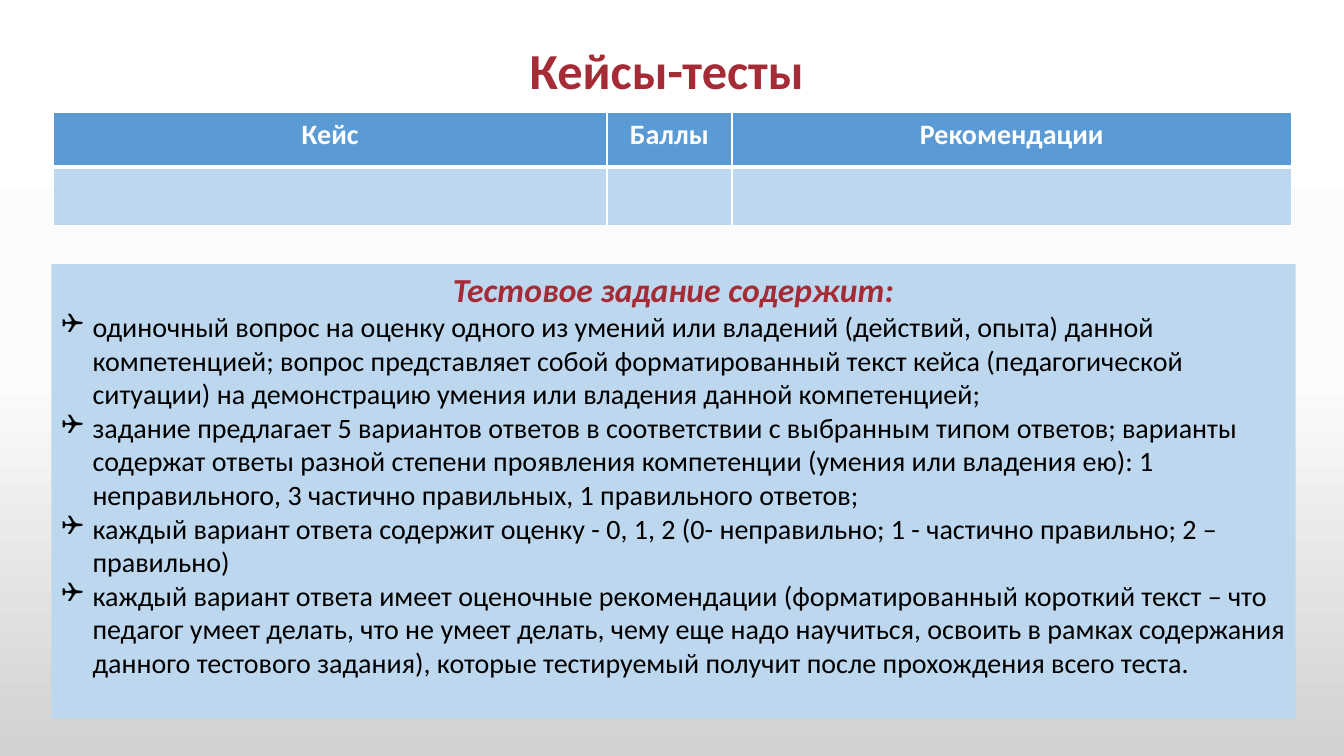
import copy
import dataclasses

import lxml.etree
import pptx
import pptx.dml.color
import pptx.enum.shapes
import pptx.enum.text
import pptx.oxml
import pptx.oxml.ns
import pptx.util

Inches = pptx.util.Inches
Pt = pptx.util.Pt
qn = pptx.oxml.ns.qn
CENTER = pptx.enum.text.PP_ALIGN.CENTER
MIDDLE = pptx.enum.text.MSO_ANCHOR.MIDDLE

FONT = "Calibri"
RED = "A52C36"
WHITE = "FFFFFF"
BLACK = "000000"
BLUE = "5B9BD5"
PALE_BLUE = "BDD7EE"


@dataclasses.dataclass(frozen=True)
class TextStyle:
    size: float
    color: str
    bold: bool = False
    italic: bool = False


@dataclasses.dataclass(frozen=True)
class Column:
    heading: str
    width: float


TITLE_STYLE = TextStyle(36, RED, bold=True)
HEADING_STYLE = TextStyle(20, WHITE, bold=True)
SUBTITLE_STYLE = TextStyle(24, RED, bold=True, italic=True)
BODY_STYLE = TextStyle(20, BLACK)

BACKGROUND_STOPS = [(0, "FFFFFF"), (0.5, "FBFBFB"), (1, "D1D1D1")]
COLUMNS = [Column("Кейс", 5.49), Column("Баллы", 1.24), Column("Рекомендации", 5.55)]
ROW_HEIGHTS = [0.54, 0.58]
REQUIREMENTS = [
    "одиночный вопрос на оценку одного из умений или владений (действий, опыта) данной "
    "компетенцией; вопрос представляет собой форматированный текст кейса (педагогической "
    "ситуации) на демонстрацию умения или владения данной компетенцией;",
    "задание предлагает 5 вариантов ответов в соответствии с выбранным типом ответов; варианты "
    "содержат ответы разной степени проявления компетенции (умения или владения ею): 1 "
    "неправильного, 3 частично правильных, 1 правильного ответов;",
    "каждый вариант ответа содержит оценку - 0, 1, 2 (0- неправильно; 1 - частично правильно; 2 – "
    "правильно)",
    "каждый вариант ответа имеет оценочные рекомендации (форматированный короткий текст – что "
    "педагог умеет делать, что не умеет делать, чему еще надо научиться, освоить в рамках "
    "содержания данного тестового задания), которые тестируемый получит после прохождения всего "
    "теста.",
]


def rgb(value: str) -> pptx.dml.color.RGBColor:
    return pptx.dml.color.RGBColor.from_string(value)


def add_run(paragraph, text: str, style: TextStyle) -> None:
    run = paragraph.add_run()
    run.text = text
    run.font.name = FONT
    run.font.size = Pt(style.size)
    run.font.bold = style.bold
    run.font.italic = style.italic
    run.font.color.rgb = rgb(style.color)


def fill_background(slide) -> None:
    fill = slide.background.fill
    fill.gradient()
    fill.gradient_angle = 270
    stop_list = slide.element.find(".//" + qn("a:gsLst"))
    stop_list.insert(1, copy.deepcopy(stop_list[0]))
    for stop, (position, color) in zip(fill.gradient_stops, BACKGROUND_STOPS):
        stop.position = position
        stop.color.rgb = rgb(color)


def add_title(slide) -> None:
    box = slide.shapes.add_textbox(Inches(0.92), Inches(0), Inches(11.5), Inches(1.45))
    frame = box.text_frame
    frame.word_wrap = True
    frame.vertical_anchor = MIDDLE
    paragraph = frame.paragraphs[0]
    paragraph.alignment = CENTER
    paragraph.line_spacing = 0.9
    add_run(paragraph, "Кейсы-тесты ", TITLE_STYLE)


def set_borders(cell, widths: dict[str, float]) -> None:
    """Draw white borders; widths in points are keyed by side, in schema order."""
    properties = cell._tc.get_or_add_tcPr()
    for index, (side, width) in enumerate(widths.items()):
        line = pptx.oxml.ns.nsdecls("a")
        properties.insert(index, pptx.oxml.parse_xml(
            f'<a:ln{side} {line} w="{Pt(width)}"><a:solidFill>'
            f'<a:srgbClr val="{WHITE}"/></a:solidFill></a:ln{side}>'))


def add_case_table(slide) -> None:
    table = slide.shapes.add_table(
        len(ROW_HEIGHTS), len(COLUMNS), Inches(0.53), Inches(1.12),
        Inches(sum(column.width for column in COLUMNS)), Inches(sum(ROW_HEIGHTS))).table
    table.horz_banding = False
    for row, height in zip(table.rows, ROW_HEIGHTS):
        row.height = Inches(height)
    for index, column in enumerate(COLUMNS):
        table.columns[index].width = Inches(column.width)
        heading, blank = table.cell(0, index), table.cell(1, index)
        for cell, color, top, bottom in ((heading, BLUE, 1, 3), (blank, PALE_BLUE, 3, 1)):
            cell.fill.solid()
            cell.fill.fore_color.rgb = rgb(color)
            set_borders(cell, {"L": 1, "R": 1, "T": top, "B": bottom})
        heading.margin_left = heading.margin_right = Inches(0.07)
        heading.margin_top = heading.margin_bottom = 0
        paragraph = heading.text_frame.paragraphs[0]
        paragraph.alignment = CENTER
        paragraph.line_spacing = 1.15
        add_run(paragraph, column.heading, HEADING_STYLE)


def add_bullet(paragraph) -> None:
    properties = paragraph._p.get_or_add_pPr()
    properties.set("marL", str(Inches(0.31)))
    properties.set("indent", str(-Inches(0.31)))
    lxml.etree.SubElement(properties, qn("a:buFont"), typeface="Wingdings")
    lxml.etree.SubElement(properties, qn("a:buChar"), char="❑")


def add_requirements(slide) -> None:
    panel = slide.shapes.add_shape(
        pptx.enum.shapes.MSO_SHAPE.RECTANGLE,
        Inches(0.51), Inches(2.62), Inches(12.34), Inches(4.51))
    panel.shadow.inherit = False
    panel.fill.solid()
    panel.fill.fore_color.rgb = rgb(PALE_BLUE)
    panel.line.fill.background()
    frame = panel.text_frame
    frame.word_wrap = True
    frame.auto_size = pptx.enum.text.MSO_AUTO_SIZE.SHAPE_TO_FIT_TEXT
    frame.vertical_anchor = pptx.enum.text.MSO_ANCHOR.TOP
    subtitle = frame.paragraphs[0]
    subtitle.alignment = CENTER
    add_run(subtitle, "Тестовое задание содержит:", SUBTITLE_STYLE)
    for requirement in REQUIREMENTS:
        paragraph = frame.add_paragraph()
        paragraph.alignment = pptx.enum.text.PP_ALIGN.LEFT
        add_bullet(paragraph)
        add_run(paragraph, requirement, BODY_STYLE)


def main() -> None:
    presentation = pptx.Presentation()
    presentation.slide_width = Inches(13.33)
    presentation.slide_height = Inches(7.5)
    slide = presentation.slides.add_slide(presentation.slide_layouts[6])
    fill_background(slide)
    add_title(slide)
    add_case_table(slide)
    add_requirements(slide)
    presentation.save("out.pptx")


if __name__ == "__main__":
    main()
